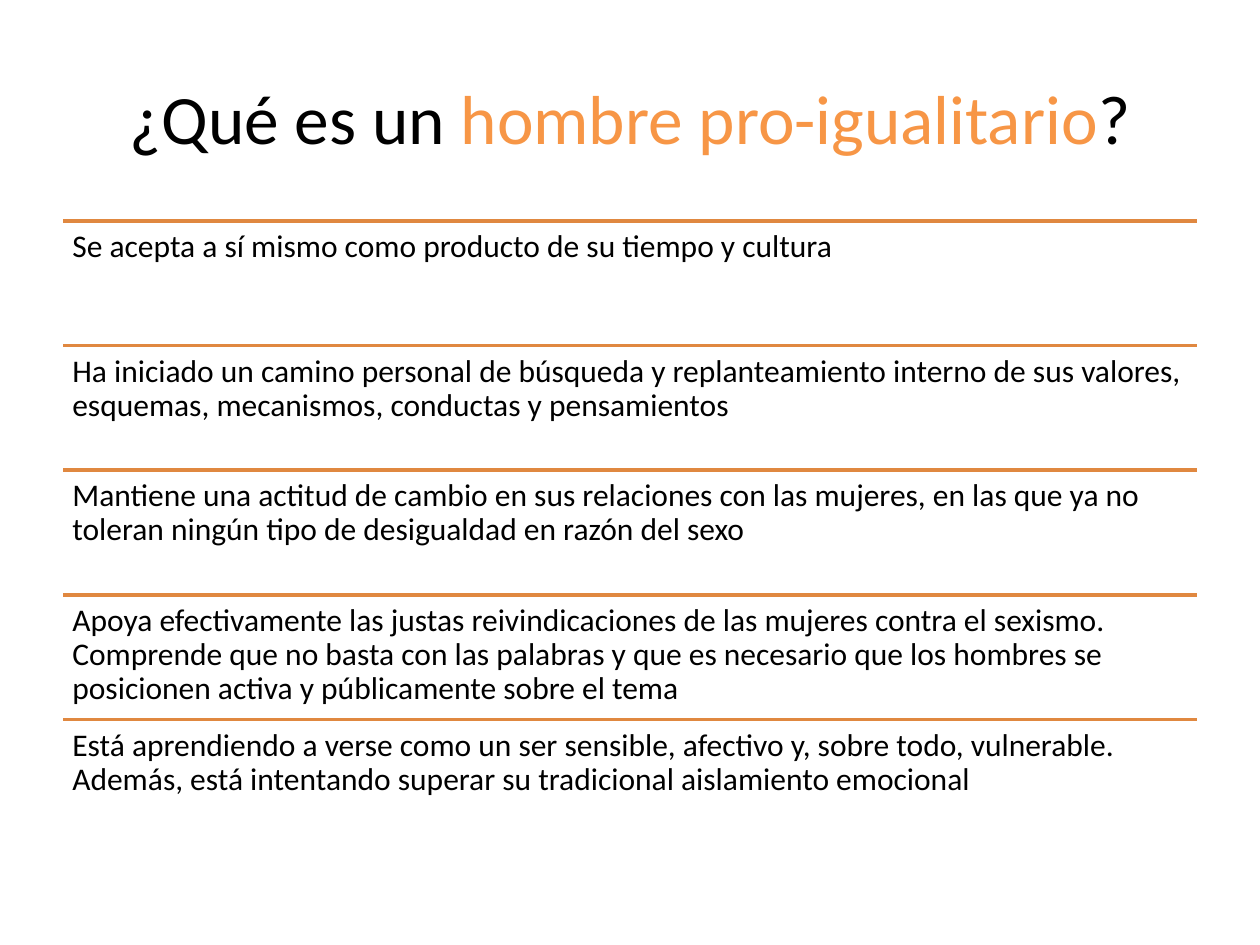
from lxml import etree
from pptx import Presentation
from pptx.dml.color import RGBColor
from pptx.enum.shapes import MSO_CONNECTOR
from pptx.enum.text import MSO_ANCHOR, PP_ALIGN
from pptx.oxml.ns import qn
from pptx.util import Cm, Pt

STRAIGHT = MSO_CONNECTOR.STRAIGHT
TOP, MIDDLE = MSO_ANCHOR.TOP, MSO_ANCHOR.MIDDLE
LEFT, CENTER = PP_ALIGN.LEFT, PP_ALIGN.CENTER
TITLE_ONLY = 5

FONT = "Calibri"
COLORS = {"text": "000000", "accent": "F79646", "rule": "E08840"}

TITLE_RUNS = [
    ("¿Qué es un ", "text"),
    ("hombre pro-igualitario", "accent"),
    ("?", "text"),
]
TRAITS = [
    "Se acepta a sí mismo como producto de su tiempo y cultura",
    "Ha iniciado un camino personal de búsqueda y replanteamiento interno "
    "de sus valores, esquemas, mecanismos, conductas y pensamientos",
    "Mantiene una actitud de cambio en sus relaciones con las mujeres, en las "
    "que ya no toleran ningún tipo de desigualdad en razón del sexo",
    "Apoya efectivamente las justas reivindicaciones de las mujeres contra el "
    "sexismo. Comprende que no basta con las palabras y que es necesario que "
    "los hombres se posicionen activa y públicamente sobre el tema",
    "Está aprendiendo a verse como un ser sensible, afectivo y, sobre todo, "
    "vulnerable. Además, está intentando superar su tradicional aislamiento "
    "emocional",
]


def color(name):
    return RGBColor.from_string(COLORS[name])


def fill_title(sp, left, top, width, height):
    """Title placeholder with the key phrase in the accent colour."""
    sp.left, sp.top, sp.width, sp.height = left, top, width, height
    tf = sp.text_frame
    tf.word_wrap = True
    tf.vertical_anchor = MIDDLE
    p = tf.paragraphs[0]
    p.alignment = CENTER
    p.font.name, p.font.size = FONT, Pt(39.6)
    for text, name in TITLE_RUNS:
        r = p.add_run()
        r.text = text
        r.font.color.rgb = color(name)


def add_rule(shapes, left, top, width):
    """Horizontal line above a row."""
    line = shapes.add_connector(STRAIGHT, left, top, left + width, top)
    line.line.color.rgb = color("rule")
    line.line.width = Pt(2)
    etree.SubElement(line._element.spPr, qn("a:effectLst"))


def add_trait(shapes, text, left, top, width, height):
    """Text of one row."""
    tf = shapes.add_textbox(left, top, width, height).text_frame
    tf.word_wrap = True
    tf.vertical_anchor = TOP
    tf.margin_left = tf.margin_right = Cm(0.19)
    tf.margin_top = tf.margin_bottom = Cm(0.19)
    p = tf.paragraphs[0]
    p.text = text
    p.alignment = LEFT
    p.line_spacing = 0.9
    p.font.name, p.font.size = FONT, Pt(18)
    p.font.color.rgb = color("text")


def add_trait_list(s, left, top, width, height):
    """Equal rows, each a rule with its text below."""
    shapes = s.shapes.add_group_shape().shapes
    row_height = height // len(TRAITS)
    for i, text in enumerate(TRAITS):
        y = top + i * row_height
        add_rule(shapes, left, y, width)
        add_trait(shapes, text, left, y, width, row_height)


def main():
    prs = Presentation()
    prs.slide_width, prs.slide_height = Cm(25.4), Cm(19.05)
    s = prs.slides.add_slide(prs.slide_layouts[TITLE_ONLY])
    left, width = Cm(1.27), Cm(22.86)
    fill_title(s.shapes.title, left, Cm(0.76), width, Cm(3.18))
    add_trait_list(s, left, Cm(4.45), width, Cm(12.57))
    prs.save("out.pptx")


if __name__ == "__main__":
    main()
